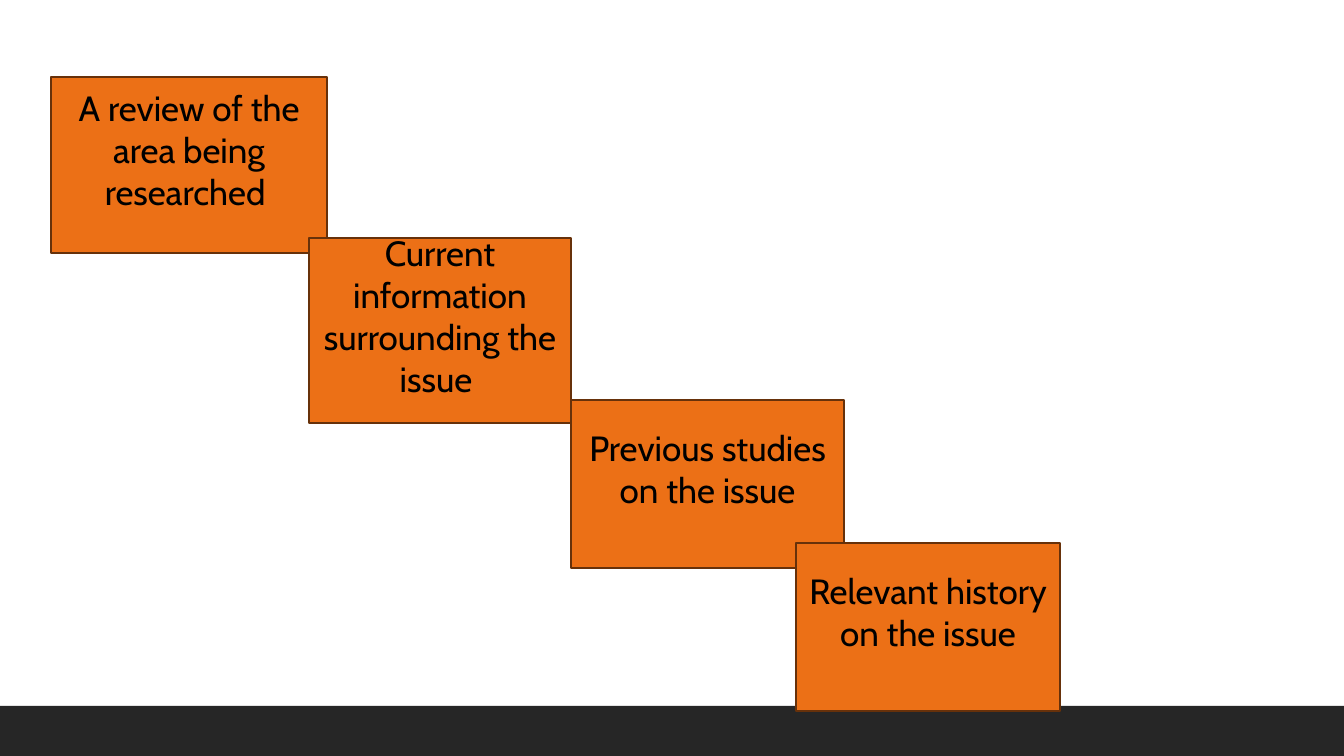
from pptx import Presentation
from pptx.dml.color import RGBColor
from pptx.enum.shapes import MSO_SHAPE
from pptx.enum.text import MSO_ANCHOR, PP_ALIGN
from pptx.util import Pt

# Text, then left, top, width and height in px
STEPS = [
    ("A review of the area being researched ", (51, 77, 276, 176)),
    ("Current information surrounding the issue ", (309, 238, 262, 185)),
    ("Previous studies on the issue", (571, 400, 273, 168)),
    ("Relevant history on the issue", (796, 543, 264, 168)),
]
WIDTH, HEIGHT = 1344, 756
BAND = 50
FOOT = 35  # bottom inset that lifts the text above the middle

ORANGE = RGBColor(0xEC, 0x70, 0x16)
BROWN = RGBColor(0x67, 0x31, 0x0A)
DARK = RGBColor(0x26, 0x26, 0x26)
BLACK = RGBColor(0, 0, 0)
RECT = MSO_SHAPE.RECTANGLE
CENTER = PP_ALIGN.CENTER
MIDDLE = MSO_ANCHOR.MIDDLE
SCALE = 914400 / 100.8


def px(n):
    return round(n * SCALE)


def add_rect(slide, box, fill):
    rect = slide.shapes.add_shape(RECT, *map(px, box))
    rect.shadow.inherit = False
    rect.fill.solid()
    rect.fill.fore_color.rgb = fill
    return rect


def add_step(slide, text, box):
    step = add_rect(slide, box, ORANGE)
    step.line.color.rgb = BROWN
    step.line.width = Pt(1.25)
    frame = step.text_frame
    frame.word_wrap = True
    frame.vertical_anchor = MIDDLE
    frame.margin_bottom = px(FOOT)
    para = frame.paragraphs[0]
    para.text = text
    para.alignment = CENTER
    para.font.name = "Cabin"
    para.font.size = Pt(25)
    para.font.color.rgb = BLACK


def main():
    deck = Presentation()
    deck.slide_width, deck.slide_height = px(WIDTH), px(HEIGHT)
    slide = deck.slides.add_slide(deck.slide_layouts[6])
    band = add_rect(slide, (0, HEIGHT - BAND, WIDTH, BAND), DARK)
    band.line.fill.background()
    for text, box in STEPS:
        add_step(slide, text, box)
    deck.save("out.pptx")


if __name__ == "__main__":
    main()
